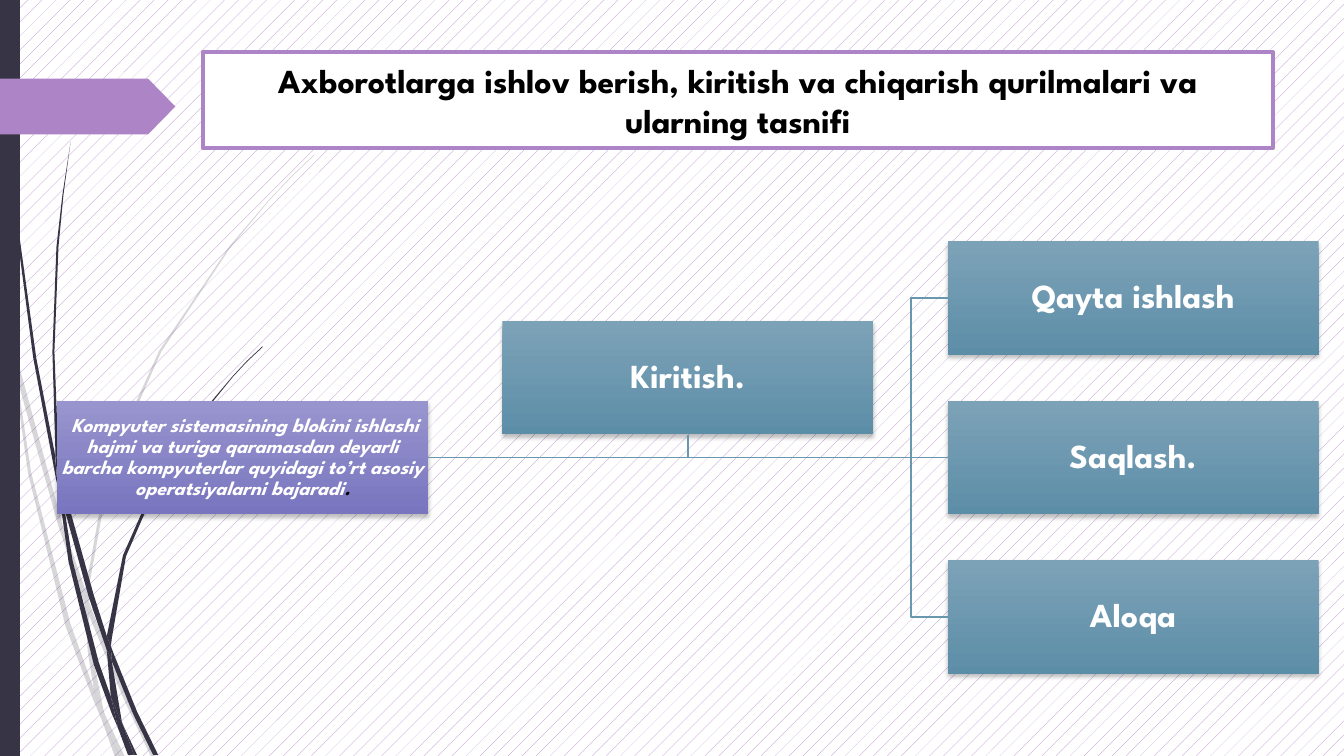
from lxml.etree import SubElement
from pptx import Presentation
from pptx.dml.color import RGBColor
from pptx.enum.dml import MSO_PATTERN
from pptx.enum.shapes import MSO_CONNECTOR, MSO_SHAPE
from pptx.enum.text import MSO_ANCHOR, PP_ALIGN
from pptx.oxml.ns import qn
from pptx.util import Cm, Pt

FONT = "League Spartan"
WHITE = RGBColor(0xFF, 0xFF, 0xFF)
BLACK = RGBColor(0x00, 0x00, 0x00)
DARK = RGBColor(0x37, 0x35, 0x45)
PURPLE = RGBColor(0xAD, 0x84, 0xC6)
LINK_BLUE = RGBColor(0x69, 0x97, 0xAF)
BLUE_TOP = RGBColor(0x7C, 0xA2, 0xB7)
BLUE_BOTTOM = RGBColor(0x5D, 0x8E, 0xA8)
VIOLET_TOP = RGBColor(0x98, 0x95, 0xCE)
VIOLET_BOTTOM = RGBColor(0x79, 0x75, 0xBF)

NODE_WIDTH, NODE_HEIGHT = Cm(9.35), Cm(2.86)
LEFT_COLUMN, MIDDLE_COLUMN, RIGHT_COLUMN = Cm(1.44), Cm(12.66), Cm(23.88)
FIRST_ROW, ROW_STEP = Cm(6.08), Cm(4.02)
BEND_GAP = Cm(0.93)
STRAND_UNIT = Cm(2.54) / 100

PALE_STRANDS = [
    [(11, 350), (9, 322), (0, 282), (0, 299), (10, 344)],
    [(58, 522), (84, 599), (85, 586), (62, 520), (14, 345), (17, 376)],
    [(92, 607), (88, 596), (88, 610), (123, 694), (150, 751), (155, 751), (127, 692)],
    [(119, 751), (124, 751), (105, 711)],
    [(93, 683), (70, 619), (31, 469), (17, 376), (11, 350), (28, 470), (65, 621),
     (92, 693), (101, 714), (99, 707)],
    [(84, 599), (87, 646), (93, 683), (96, 692), (105, 711), (103, 706), (91, 646),
     (88, 610), (88, 608)],
    [(88, 584), (110, 462), (160, 349), (229, 245), (268, 198), (290, 175), (312, 154),
     (312, 153), (289, 175), (268, 197), (228, 244), (158, 348), (107, 461), (85, 584),
     (85, 586), (88, 596)],
    [(101, 714), (114, 751), (119, 751)],
    [(88, 608), (88, 610), (88, 596), (85, 586), (84, 599)],
    [(96, 692), (93, 683), (99, 707), (101, 714), (119, 751), (105, 711)],
]
DARK_STRANDS = [
    [(7, 110), (17, 233), (33, 355), (56, 477), (57, 481), (55, 457), (55, 453),
     (36, 355), (19, 232), (8, 109), (5, 48), (4, 0), (3, 0), (4, 48)],
    [(88, 592), (106, 645), (106, 633), (106, 631), (93, 590), (60, 472), (64, 505)],
    [(113, 649), (110, 641), (111, 656), (132, 708), (152, 749), (157, 749), (136, 706)],
    [(110, 691), (98, 657), (72, 556), (64, 505), (57, 477), (68, 557), (93, 659),
     (111, 708), (117, 722), (116, 717)],
    [(60, 472), (58, 453), (54, 349), (58, 245), (63, 193), (70, 141), (62, 193),
     (56, 245), (52, 349), (55, 449)],
    [(133, 749), (136, 749), (122, 719)],
    [(57, 477), (64, 505), (60, 472), (55, 449), (55, 453)],
    [(111, 633), (125, 552), (158, 476), (205, 406), (231, 374), (245, 359), (261, 344),
     (260, 344), (245, 358), (231, 373), (204, 405), (156, 474), (122, 551), (106, 631),
     (110, 641)],
    [(117, 722), (127, 749), (131, 749)],
    [(106, 645), (110, 691), (116, 706), (122, 719), (121, 716), (111, 656), (109, 651)],
    [(106, 645), (109, 651), (111, 656), (110, 641), (106, 631), (106, 633)],
    [(116, 706), (110, 691), (116, 717), (117, 722), (130, 749), (133, 749), (122, 719)],
]


def add_strand(page, points, opacity):
    builder = page.shapes.build_freeform(*points[0], scale=STRAND_UNIT)
    builder.add_line_segments(points[1:], close=True)
    strand = builder.convert_to_shape()
    strand.shadow.inherit = False
    strand.fill.solid()
    strand.fill.fore_color.rgb = DARK
    strand.line.fill.background()
    if opacity < 100:
        color = strand._element.spPr.find(qn("a:solidFill"))[0]
        SubElement(color, qn("a:alpha"), val=str(opacity * 1000))


def add_box(page, preset, left, top, width, height, fill):
    box = page.shapes.add_shape(preset, left, top, width, height)
    box.shadow.inherit = False
    box.fill.solid()
    box.fill.fore_color.rgb = fill
    box.line.fill.background()
    return box


def write_text(box, text, size, color, italic=False):
    frame = box.text_frame
    frame.word_wrap = True
    frame.vertical_anchor = MSO_ANCHOR.MIDDLE
    para = frame.paragraphs[0]
    para.text = text
    para.alignment = PP_ALIGN.CENTER
    format_span(para.runs[0], size, color, italic)
    return para


def format_span(span, size, color, italic):
    span.font.name = FONT
    span.font.size = Pt(size)
    span.font.bold = True
    span.font.italic = italic
    span.font.color.rgb = color


def add_node(page, left, top, text, size=24, colors=(BLUE_TOP, BLUE_BOTTOM), italic=False):
    node = add_box(page, MSO_SHAPE.RECTANGLE, left, top, NODE_WIDTH, NODE_HEIGHT, colors[0])
    node.fill.gradient()
    node.fill.gradient_angle = 270
    for stop, color in zip(node.fill.gradient_stops, colors):
        stop.color.rgb = color
    add_soft_shadow(node)
    frame = node.text_frame
    frame.margin_left = frame.margin_right = Cm(0.03)
    frame.margin_top = frame.margin_bottom = Cm(0.03)
    write_text(node, text, size, WHITE, italic).line_spacing = 0.9
    return node


def add_soft_shadow(shape):
    effects = shape._element.spPr.find(qn("a:effectLst"))
    shadow = SubElement(effects, qn("a:outerShdw"), blurRad=str(Pt(3)), dist=str(Pt(2)),
                        dir="5400000", rotWithShape="0")
    color = SubElement(shadow, qn("a:srgbClr"), val=str(BLACK))
    SubElement(color, qn("a:alpha"), val="25000")


def style_link(link):
    link.line.color.rgb = LINK_BLUE
    link.line.width = Pt(1.25)


def add_bent_link(page, points):
    builder = page.shapes.build_freeform(*points[0])
    builder.add_line_segments(points[1:], close=False)
    link = builder.convert_to_shape()
    link.shadow.inherit = False
    link.fill.background()
    style_link(link)


def add_straight_link(page, source, target):
    link = page.shapes.add_connector(MSO_CONNECTOR.STRAIGHT, 0, 0, 0, 0)
    link.begin_connect(source, 3)
    link.end_connect(target, 1)
    style_link(link)
    SubElement(link._element.spPr, qn("a:effectLst"))


def add_decoration(page, deck):
    for strands, opacity in ((PALE_STRANDS, 20), (DARK_STRANDS, 100)):
        for points in strands:
            add_strand(page, points, opacity)
    add_box(page, MSO_SHAPE.RECTANGLE, 0, 0, Cm(0.5), deck.slide_height, DARK)
    tab = add_box(page, MSO_SHAPE.PENTAGON, 0, Cm(1.98), Cm(4.42), Cm(1.41), PURPLE)
    tab.adjustments[0] = 0.49


def add_title(page, text):
    title = add_box(page, MSO_SHAPE.RECTANGLE, Cm(5.11), Cm(1.32), Cm(26.97), Cm(2.41), WHITE)
    title.line.color.rgb = PURPLE
    title.line.width = Pt(3)
    write_text(title, text, 24, BLACK)


def add_diagram(page):
    middle_row = FIRST_ROW + ROW_STEP
    root = add_node(
        page, LEFT_COLUMN, middle_row,
        " Kompyuter sistemasining blokini ishlashi hajmi va turiga qaramasdan deyarli "
        "barcha kompyuterlar quyidagi to’rt asosiy operatsiyalarni bajaradi",
        14, (VIOLET_TOP, VIOLET_BOTTOM), True)
    period = root.text_frame.paragraphs[0].add_run()
    period.text = "."
    format_span(period, 14, BLACK, True)

    names = ("Qayta ishlash", "Saqlash.", "Aloqa")
    upper, middle, lower = [add_node(page, RIGHT_COLUMN, FIRST_ROW + row * ROW_STEP, name)
                            for row, name in enumerate(names)]
    entry = add_node(page, MIDDLE_COLUMN, FIRST_ROW + ROW_STEP // 2, "Kiritish.")

    start = (LEFT_COLUMN + NODE_WIDTH, middle_row + NODE_HEIGHT // 2)
    entry_center = MIDDLE_COLUMN + NODE_WIDTH // 2
    add_bent_link(page, [start, (entry_center, start[1]),
                         (entry_center, entry.top + NODE_HEIGHT)])
    bend = RIGHT_COLUMN - BEND_GAP
    for node in (lower, upper):
        center = node.top + NODE_HEIGHT // 2
        add_bent_link(page, [start, (bend, start[1]), (bend, center), (RIGHT_COLUMN, center)])
    add_straight_link(page, root, middle)


def main():
    deck = Presentation()
    deck.slide_width, deck.slide_height = Cm(33.87), Cm(19.05)
    page = deck.slides.add_slide(deck.slide_layouts[6])
    backdrop = page.background.fill
    backdrop.patterned()
    backdrop.pattern = MSO_PATTERN.PERCENT_5
    backdrop.fore_color.rgb = PURPLE
    backdrop.back_color.rgb = WHITE
    add_decoration(page, deck)
    add_title(page, "Axborotlarga ishlov berish, kiritish va chiqarish qurilmalari va ularning tasnifi")
    add_diagram(page)
    deck.save("out.pptx")


if __name__ == "__main__":
    main()
